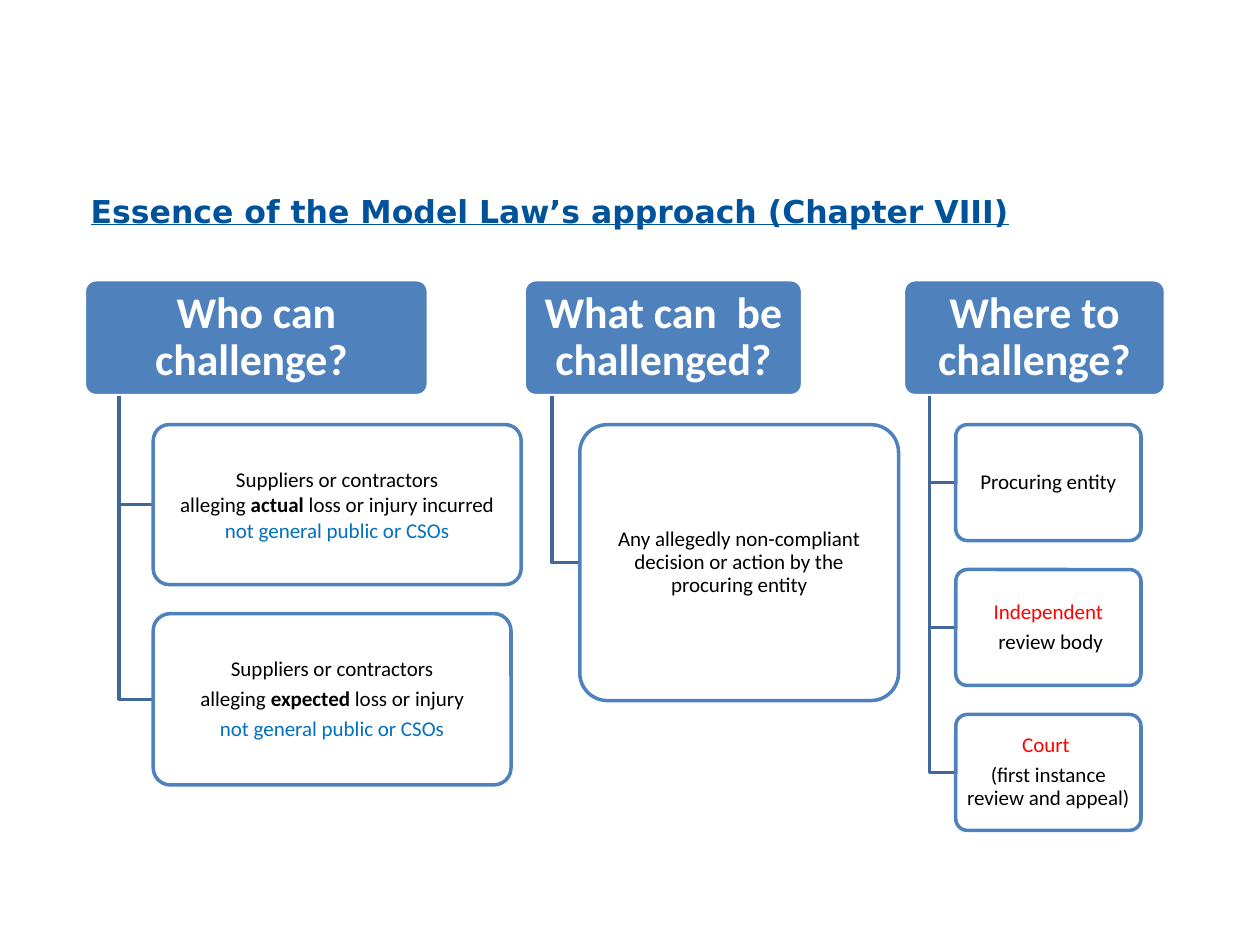
from lxml import etree
from pptx import Presentation
from pptx.dml.color import RGBColor
from pptx.enum.shapes import MSO_SHAPE
from pptx.enum.text import MSO_ANCHOR, PP_ALIGN
from pptx.oxml.ns import qn
from pptx.util import Inches, Pt

ROUND = MSO_SHAPE.ROUNDED_RECTANGLE
MIDDLE = MSO_ANCHOR.MIDDLE
LEFT, CENTER = PP_ALIGN.LEFT, PP_ALIGN.CENTER

BLUE, TRUNK, WHITE = "4F81BD", "3F6797", "FFFFFF"
NOTE, RED = "0070C0", "FF0000"
TOP, HEAD, GAP = 2.22, 0.92, 0.23

NO_PUBLIC = [("not general public or CSOs", {"color": NOTE})]
SUPPLIERS = [("Suppliers or contractors", {})]
BOLD = {"bold": True}

# Each column: heading, left, width, boxes as (width, height, paragraphs, format)
COLUMNS = [
    ("Who can challenge? ", 0.67, 2.73, [
        (2.92, 1.27, [SUPPLIERS,
                      [("alleging", {}), (" actual ", BOLD),
                       ("loss or injury incurred", {})],
                      NO_PUBLIC], {"line": 1.0, "after": 0}),
        (2.84, 1.36, [SUPPLIERS,
                      [("alleging ", {}), ("expected ", BOLD),
                       ("loss or injury", {})],
                      NO_PUBLIC], {}),
    ]),
    ("What can  be challenged?", 4.16, 2.21, [
        (2.53, 2.19, [[("Any allegedly non-compliant decision or action "
                        "by the procuring entity", {})]], {}),
    ]),
    ("Where to challenge?", 7.17, 2.08, [
        (1.47, HEAD, [[("Procuring entity", {})]], {}),
        (1.47, HEAD, [[("Independent", {"color": RED})],
                      [(" review body", {})]], {}),
        (1.47, HEAD, [[("Court ", {"color": RED})],
                      [("(first instance review and appeal)", {})]], {}),
    ]),
]


def rgb(code):
    return RGBColor.from_string(code)


def write(frame, paras, size=12, face="Calibri", color="000000", bold=False,
          under=False, align=CENTER, line=0.9, after=4.2):
    """Fill a frame with paragraphs, each a list of (text, run format)."""
    frame.word_wrap = True
    frame.vertical_anchor = MIDDLE
    for i, runs in enumerate(paras):
        para = frame.paragraphs[0] if i == 0 else frame.add_paragraph()
        para.alignment = align
        para.line_spacing = line
        para.space_before, para.space_after = Pt(0), Pt(after)
        for text, style in runs:
            run = para.add_run()
            run.text = text
            font = run.font
            font.name, font.size = face, Pt(size)
            font.bold = style.get("bold", bold)
            font.underline = under
            font.color.rgb = rgb(style.get("color", color))


def add_box(slide, left, top, width, height, fill, edge, pad, alpha=None):
    box = slide.shapes.add_shape(
        ROUND, Inches(left), Inches(top), Inches(width), Inches(height))
    box.adjustments[0] = 0.1
    box.shadow.inherit = False
    box.fill.solid()
    box.fill.fore_color.rgb = rgb(fill)
    if alpha:
        tint = box.fill._xPr.find(".//" + qn("a:srgbClr"))
        etree.SubElement(tint, qn("a:alpha"), val=str(alpha * 1000))
    box.line.color.rgb = rgb(edge)
    box.line.width = Pt(2)
    frame = box.text_frame
    frame.margin_left = frame.margin_right = Inches(pad)
    frame.margin_top = frame.margin_bottom = Inches(pad * 0.6)
    return frame


def add_branch(slide, left, top, right, bottom):
    """Draw a line down from a heading and across to a box."""
    pen = slide.shapes.build_freeform(Inches(left), Inches(top))
    pen.add_line_segments([(Inches(left), Inches(bottom)),
                           (Inches(right), Inches(bottom))], close=False)
    branch = pen.convert_to_shape()
    branch.shadow.inherit = False
    branch.fill.background()
    branch.line.color.rgb = rgb(TRUNK)
    branch.line.width = Pt(2)


def add_column(slide, name, left, width, boxes):
    head = add_box(slide, left, TOP, width, HEAD, BLUE, WHITE, 0.05)
    write(head, [[(name, {})]], size=25, color=WHITE, bold=True, after=8.75)
    trunk, edge = left + 0.1 * width, left + 0.2 * width
    base = TOP + HEAD
    top = base + GAP
    for wide, high, paras, style in boxes:
        add_branch(slide, trunk, base, edge, top + high / 2)
        frame = add_box(slide, edge, top, wide, high, WHITE, BLUE, 0.03, 90)
        write(frame, paras, **style)
        top += high + GAP


def add_title(slide, text):
    title = slide.shapes.title
    title.left, title.top = Inches(0.62), Inches(1.47)
    title.width, title.height = Inches(8.85), Inches(0.4)
    write(title.text_frame, [[(text, {})]], size=18, face="DejaVu Sans",
          color="00539B", bold=True, under=True, align=LEFT, line=1.0, after=0)


def main():
    deck = Presentation()
    deck.slide_width, deck.slide_height = Inches(10), Inches(7.5)
    slide = deck.slides.add_slide(deck.slide_layouts[5])
    add_title(slide, "Essence of the Model Law’s approach (Chapter VIII)")
    for column in COLUMNS:
        add_column(slide, *column)
    deck.save("out.pptx")


if __name__ == "__main__":
    main()
